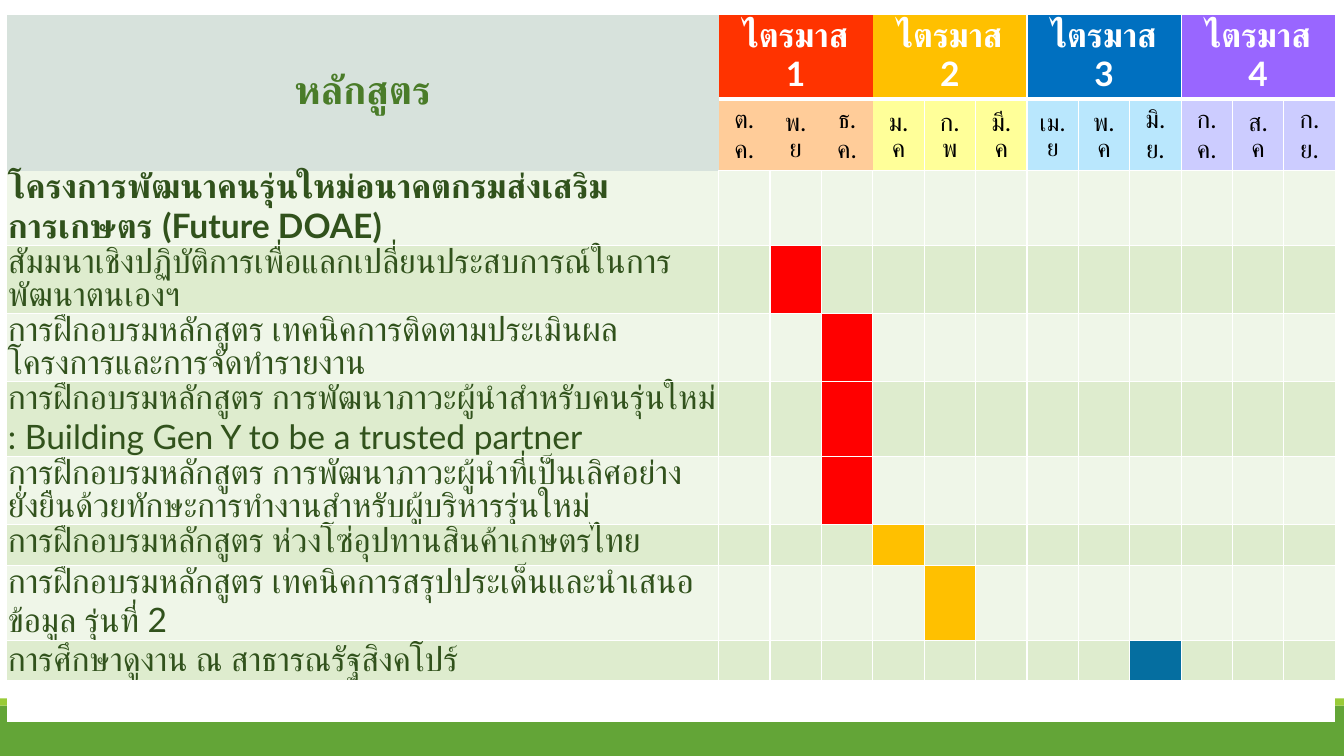
from lxml import etree
from pptx import Presentation
from pptx.dml.color import RGBColor
from pptx.enum.shapes import MSO_SHAPE
from pptx.enum.text import MSO_ANCHOR, PP_ALIGN
from pptx.oxml.ns import qn
from pptx.util import Cm, Pt

RECT = MSO_SHAPE.RECTANGLE
MID, TOP = MSO_ANCHOR.MIDDLE, MSO_ANCHOR.TOP
CENTER, LEFT = PP_ALIGN.CENTER, PP_ALIGN.LEFT

WHITE = RGBColor(0xFF, 0xFF, 0xFF)
BLACK = RGBColor(0, 0, 0)
GREEN = RGBColor(0x63, 0xA5, 0x37)
LIME = RGBColor(0x99, 0xCB, 0x38)
LEAF = RGBColor(0x4A, 0x7C, 0x29)
DARK = RGBColor(0x31, 0x52, 0x1C)
GREY = RGBColor(0xD7, 0xE2, 0xDC)
PALE = RGBColor(0xEF, 0xF6, 0xE8)
MINT = RGBColor(0xDE, 0xEC, 0xCE)
RED = RGBColor(0xFF, 0, 0)
GOLD = RGBColor(0xFF, 0xC0, 0)
BLUE = RGBColor(0x05, 0x6E, 0xA0)

TITLE = "หลักสูตร"
TERMS = [
    ("ไตรมาส 1", RGBColor(0xFF, 0x33, 0), RGBColor(0xFF, 0xCC, 0x99), ["ต.ค.", "พ.ย", "ธ.ค."]),
    ("ไตรมาส 2", GOLD, RGBColor(0xFF, 0xFF, 0x99), ["ม.ค", "ก.พ", "มี.ค"]),
    ("ไตรมาส 3", RGBColor(0, 0x70, 0xC0), RGBColor(0xB9, 0xE7, 0xFD), ["เม.ย", "พ.ค", "มิ.ย."]),
    ("ไตรมาส 4", RGBColor(0x99, 0x66, 0xFF), RGBColor(0xCC, 0xCC, 0xFF), ["ก.ค.", "ส.ค", "ก.ย."]),
]
TASKS = [
    ("โครงการพัฒนาคนรุ่นใหม่อนาคตกรมส่งเสริมการเกษตร (Future DOAE)", None, None, MID),
    ("สัมมนาเชิงปฏิบัติการเพื่อแลกเปลี่ยนประสบการณ์ในการพัฒนาตนเองฯ", 2, RED, MID),
    ("การฝึกอบรมหลักสูตร เทคนิคการติดตามประเมินผลโครงการและการจัดทำรายงาน", 3, RED, TOP),
    ("การฝึกอบรมหลักสูตร การพัฒนาภาวะผู้นำสำหรับคนรุ่นใหม่ : Building Gen Y to be a trusted partner",
     3, RED, MID),
    ("การฝึกอบรมหลักสูตร การพัฒนาภาวะผู้นำที่เป็นเลิศอย่างยั่งยืนด้วยทักษะการทำงานสำหรับผู้บริหารรุ่นใหม่",
     3, RED, TOP),
    ("การฝึกอบรมหลักสูตร ห่วงโซ่อุปทานสินค้าเกษตรไทย", 4, GOLD, TOP),
    ("การฝึกอบรมหลักสูตร เทคนิคการสรุปประเด็นและนำเสนอข้อมูล รุ่นที่ 2", 5, GOLD, TOP),
    ("การศึกษาดูงาน ณ สาธารณรัฐสิงคโปร์", 9, BLUE, MID),
]
ROWS, COLS = len(TASKS) + 3, 13


def put(cell, text, size=24, font="Lato", color=DARK, bold=False, align=LEFT, anchor=MID):
    cell.vertical_anchor = anchor
    para = cell.text_frame.paragraphs[0]
    para.alignment = align
    run = para.add_run()
    run.text = text
    face = run.font
    face.size, face.name, face.bold = Pt(size), font, bold
    face.color.rgb = color


def edges(row, col):
    if col == 0:
        return "" if row < 2 else "RB" if row == 2 else "RTB"
    if row == 0:
        return "B" + ("L" if col in (7, 10) else "") + ("R" if col in (6, 9) else "")
    if row == 1 and col < 5:
        return "TRB" if col == 4 else "TB"
    return "LTB" if col == COLS - 1 else "LRTB"


def paint(row, col, color):
    cell = grid.cell(row, col)
    props = cell._tc.get_or_add_tcPr()
    shown = edges(row, col)
    for side in "LRTB":
        line = etree.SubElement(props, qn("a:ln" + side))
        if side in shown:
            thick = (row, side) in ((0, "B"), (1, "T"))
            line.set("w", str(Pt(3 if thick else 1)))
            fill = etree.SubElement(line, qn("a:solidFill"))
            etree.SubElement(fill, qn("a:srgbClr")).set("val", str(WHITE))
        else:
            etree.SubElement(line, qn("a:noFill"))
    cell.fill.solid()
    cell.fill.fore_color.rgb = color
    return cell


deck = Presentation()
deck.slide_width, deck.slide_height = Cm(33.87), Cm(19.05)
slide = deck.slides.add_slide(deck.slide_layouts[6])

for top, high, color in ((17.78, 1.27, GREEN), (17.6, 0.18, LIME)):
    bar = slide.shapes.add_shape(RECT, 0, Cm(top), deck.slide_width, Cm(high))
    bar.shadow.inherit = False
    bar.fill.solid()
    bar.fill.fore_color.rgb = color
    bar.line.fill.background()

frame = slide.shapes.add_table(ROWS, COLS, Cm(0.18), Cm(0.38), Cm(33.48), Cm(11.9))
grid = frame.table
grid.first_row = grid.horz_banding = False
for num, part in enumerate(grid.columns):
    part.width = Cm(15.54) // 12 if num else Cm(17.93)
for num, part in enumerate(grid.rows):
    part.height = Cm(1.03) if num else Cm(1.5)

for row in (0, 1):
    paint(row, 0, GREY)
grid.cell(0, 0).merge(grid.cell(1, 0))
put(grid.cell(0, 0), TITLE, size=28, color=LEAF, bold=True, align=CENTER)

for term, (name, deep, light, months) in enumerate(TERMS):
    first = 1 + 3 * term
    for col, month in enumerate(months, first):
        paint(0, col, deep)
        size = 17 if month == "เม.ย" else 18
        put(paint(1, col, light), month, size=size, font="Calibri", color=BLACK, align=CENTER)
    grid.cell(0, first).merge(grid.cell(0, first + 2))
    put(grid.cell(0, first), name, color=WHITE, bold=True, align=CENTER)

for row, (name, when, mark, anchor) in enumerate(TASKS, 2):
    band = MINT if row % 2 else PALE
    for col in range(COLS):
        paint(row, col, mark if col == when else band)
    cell = grid.cell(row, 0)
    cell.margin_left = cell.margin_right = cell.margin_top = Cm(0.02)
    cell.margin_bottom = 0
    put(cell, name, bold=row == 2, anchor=anchor)

for col in range(COLS):
    paint(ROWS - 1, col, WHITE)

deck.save("out.pptx")
